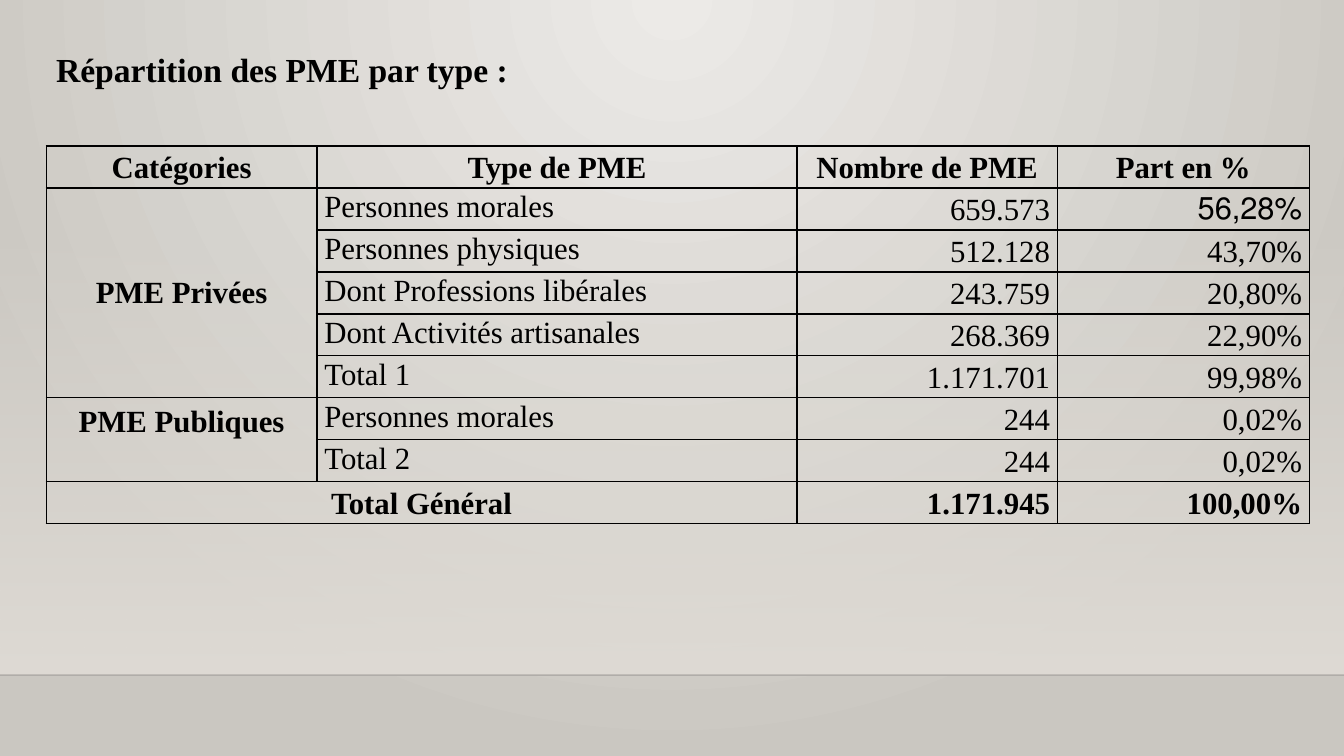
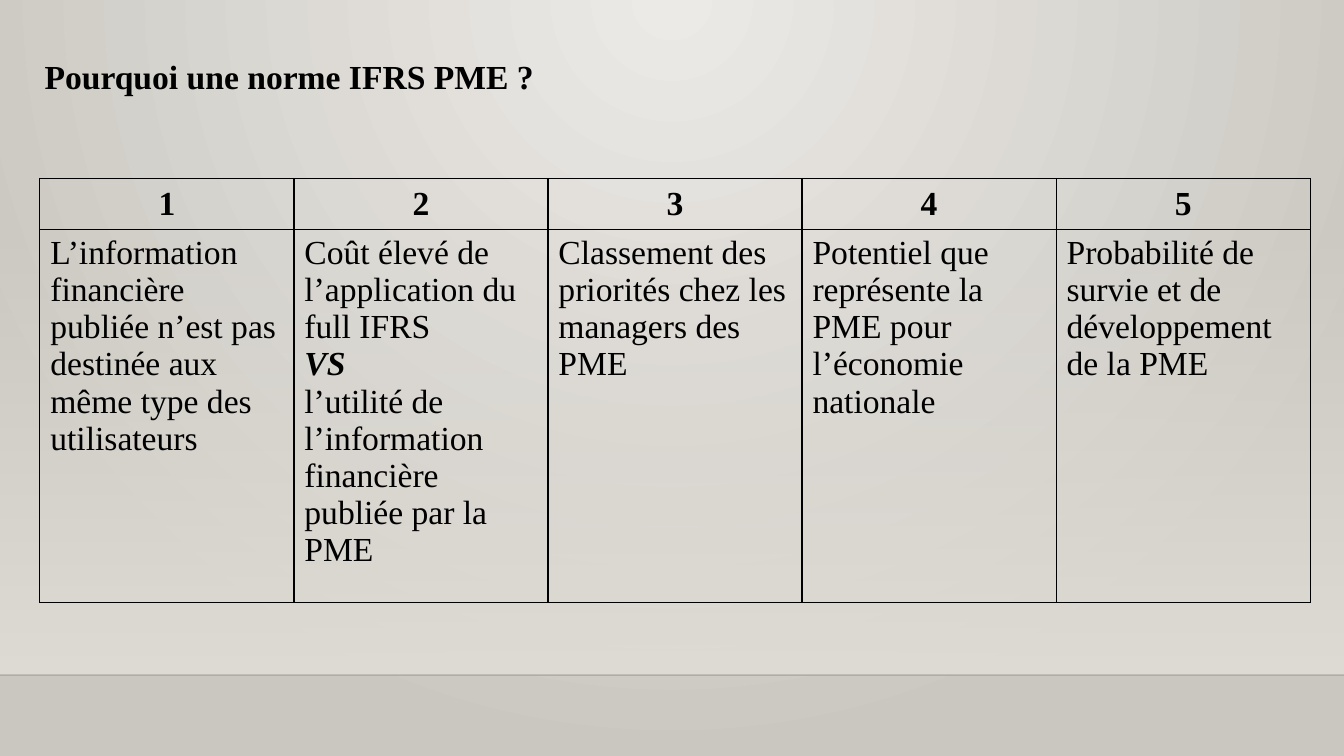
from dataclasses import dataclass, replace
from typing import Optional

from lxml import etree
from pptx import Presentation
from pptx.dml.color import RGBColor
from pptx.enum.shapes import MSO_CONNECTOR, MSO_SHAPE
from pptx.enum.text import MSO_ANCHOR, PP_ALIGN
from pptx.oxml.ns import qn
from pptx.util import Pt

PX = 9525
SLIDE_W, SLIDE_H = 1280, 720
BAND_TOP, BAND_BOTTOM = 212, 643
FONT = "Times New Roman"

BLACK = RGBColor(0x00, 0x00, 0x00)
RULE = RGBColor(0x00, 0x00, 0x01)
BG_LIGHT = RGBColor(0xEC, 0xEA, 0xE7)
BG_DARK = RGBColor(0xCA, 0xC7, 0xC1)
BAND = RGBColor(0xDF, 0xDB, 0xD5)

LEFT, CENTER, RIGHT = PP_ALIGN.LEFT, PP_ALIGN.CENTER, PP_ALIGN.RIGHT
TOP, MIDDLE = MSO_ANCHOR.TOP, MSO_ANCHOR.MIDDLE
RECTANGLE = MSO_SHAPE.RECTANGLE
STRAIGHT = MSO_CONNECTOR.STRAIGHT


@dataclass(frozen=True)
class CellStyle:
    size: int = 22
    bold: bool = False
    align: PP_ALIGN = LEFT
    anchor: MSO_ANCHOR = MIDDLE
    margin_x: int = 7
    margin_y: int = 0
    spacing: float = 1.07
    rtl: bool = False


@dataclass(frozen=True)
class Cell:
    text: str
    style: CellStyle
    rows: int = 1
    cols: int = 1


@dataclass(frozen=True)
class Title:
    text: str
    left: int
    top: int
    width: int
    height: int
    spacing: float


Grid = list[list[Optional[Cell]]]

LABEL = CellStyle(anchor=TOP)
NUMBER = CellStyle(align=RIGHT)
NUMBER_RTL = replace(NUMBER, rtl=True)
TOTAL = replace(NUMBER, bold=True)
HEADER = CellStyle(bold=True, align=CENTER)
CATEGORY = replace(HEADER, margin_x=10, margin_y=5, spacing=1.0)
CATEGORY_TOP = replace(CATEGORY, anchor=TOP, margin_y=7)
REASON_HEADER = replace(CATEGORY, size=24)
REASON = replace(REASON_HEADER, bold=False, align=LEFT, anchor=TOP)
EMPHASIS = "VS"

TYPE_HEADERS = ["Catégories", "Type de PME", "Nombre de PME", "Part en %"]
TYPE_ROWS = [
    ("Personnes morales", "659.573", "56,28%"),
    ("Personnes physiques", "512.128", "43,70%"),
    ("Dont Professions libérales", "243.759", "20,80%"),
    ("Dont Activités artisanales", "268.369", "22,90%"),
    ("Total 1", "1.171.701", "99,98%"),
    ("Personnes morales", "244", "0,02%"),
    ("Total 2", "244", "0,02%"),
]
CATEGORIES = {
    0: Cell("PME Privées", CATEGORY, rows=5),
    5: Cell("PME Publiques", CATEGORY_TOP, rows=2),
}
REASONS = [
    "L’information financière publiée n’est pas destinée aux même type des utilisateurs",
    "Coût élevé de l’application du full IFRS\nVS\n"
    "l’utilité de l’information financière publiée par la PME",
    "Classement des priorités chez les managers des PME",
    "Potentiel que représente la PME pour l’économie nationale",
    "Probabilité de survie et de développement de la PME",
]


def px(value: int) -> int:
    return value * PX


def set_alpha(element, percent: int) -> None:
    color = element.find(".//" + qn("a:srgbClr"))
    etree.SubElement(color, qn("a:alpha"), val=str(percent * 1000))


def set_gradient(fill, start: RGBColor, end: RGBColor) -> None:
    fill.gradient()
    for stop, color, position in zip(fill.gradient_stops, (start, end), (0, 1)):
        stop.color.rgb = color
        stop.position = position


def set_background(master) -> None:
    set_gradient(master.background.fill, BG_LIGHT, BG_DARK)
    grad = master.element.find(".//" + qn("a:gradFill"))
    grad.remove(grad.find(qn("a:lin")))
    shade = etree.SubElement(grad, qn("a:path"), path="circle")
    etree.SubElement(shade, qn("a:fillToRect"), l="43000", t="0", r="43000", b="100000")


def format_run(r, size: int, bold: bool, italic: bool = False) -> None:
    r.font.name = FONT
    r.font.size = Pt(size)
    r.font.bold = bold
    r.font.italic = italic
    r.font.color.rgb = BLACK


def add_band(slide) -> None:
    sp = slide.shapes.add_shape(
        RECTANGLE, 0, px(BAND_TOP), px(SLIDE_W), px(BAND_BOTTOM - BAND_TOP)
    )
    sp.shadow.inherit = False
    set_gradient(sp.fill, BAND, BAND)
    sp.fill.gradient_angle = 270
    set_alpha(sp.element.spPr.find(qn("a:gradFill")), 0)
    sp.line.fill.background()

    rule = slide.shapes.add_connector(
        STRAIGHT, 0, px(BAND_BOTTOM), px(SLIDE_W), px(BAND_BOTTOM)
    )
    rule.line.color.rgb = RULE
    rule.line.width = Pt(1)
    sp_pr = rule.element.spPr
    set_alpha(sp_pr.find(qn("a:ln")), 20)
    etree.SubElement(sp_pr, qn("a:effectLst"))


def add_title(slide, title: Title) -> None:
    sp = slide.shapes.add_textbox(
        px(title.left), px(title.top), px(title.width), px(title.height)
    )
    tf = sp.text_frame
    tf.word_wrap = True
    tf.text = title.text
    p = tf.paragraphs[0]
    p.line_spacing = title.spacing
    format_run(p.runs[0], 24, True)


def add_slide(prs, title: Title):
    slide = prs.slides.add_slide(prs.slide_layouts[6])
    add_band(slide)
    add_title(slide, title)
    return slide


def set_borders(cell) -> None:
    tc_pr = cell._tc.get_or_add_tcPr()
    for side in ("lnL", "lnR", "lnT", "lnB"):
        ln = etree.SubElement(tc_pr, qn(f"a:{side}"), w=str(Pt(1)))
        fill = etree.SubElement(ln, qn("a:solidFill"))
        etree.SubElement(fill, qn("a:srgbClr"), val=str(BLACK))


def fill_cell(target, cell: Cell) -> None:
    style = cell.style
    target.vertical_anchor = style.anchor
    target.margin_left = target.margin_right = px(style.margin_x)
    target.margin_top = target.margin_bottom = px(style.margin_y)
    tf = target.text_frame
    tf.text = cell.text
    for p in tf.paragraphs:
        p.alignment = style.align
        p.line_spacing = style.spacing
        if style.rtl:
            p._p.get_or_add_pPr().set("rtl", "1")
        strong = p.text == EMPHASIS
        for r in p.runs:
            format_run(r, style.size, style.bold or strong, strong)


def add_grid(slide, left: int, top: int, widths: list[int], heights: list[int], grid: Grid) -> None:
    table = slide.shapes.add_table(
        len(heights), len(widths), px(left), px(top), px(sum(widths)), px(sum(heights))
    ).table
    table.first_row = False
    table.horz_banding = False
    for column, width in zip(table.columns, widths):
        column.width = px(width)
    for row, height in zip(table.rows, heights):
        row.height = px(height)
    for i, line in enumerate(grid):
        for j, cell in enumerate(line):
            target = table.cell(i, j)
            set_borders(target)
            target.fill.background()
            if cell is None:
                continue
            if cell.rows > 1 or cell.cols > 1:
                target.merge(table.cell(i + cell.rows - 1, j + cell.cols - 1))
            fill_cell(target, cell)


def type_grid() -> Grid:
    grid: Grid = [[Cell(text, HEADER) for text in TYPE_HEADERS]]
    for i, (label, count, share) in enumerate(TYPE_ROWS):
        share_style = NUMBER_RTL if i == 0 else NUMBER
        grid.append([
            CATEGORIES.get(i),
            Cell(label, LABEL),
            Cell(count, NUMBER),
            Cell(share, share_style),
        ])
    grid.append([
        Cell("Total Général", HEADER, cols=2),
        None,
        Cell("1.171.945", TOTAL),
        Cell("100,00%", TOTAL),
    ])
    return grid


def reason_grid() -> Grid:
    return [
        [Cell(str(n), REASON_HEADER) for n in range(1, len(REASONS) + 1)],
        [Cell(text, REASON) for text in REASONS],
    ]


def main() -> None:
    prs = Presentation()
    prs.slide_width, prs.slide_height = px(SLIDE_W), px(SLIDE_H)
    set_background(prs.slide_master)

    slide = add_slide(prs, Title("Répartition des PME par type :", 44, 39, 641, 49, 1.07))
    grid = type_grid()
    add_grid(slide, 44, 139, [258, 457, 248, 240], [40] * len(grid), grid)

    slide = add_slide(prs, Title("Pourquoi une norme IFRS PME ?", 33, 41, 1212, 51, 1.2))
    add_grid(slide, 38, 170, [242] * len(REASONS), [45, 328], reason_grid())

    prs.save("out.pptx")


if __name__ == "__main__":
    main()
